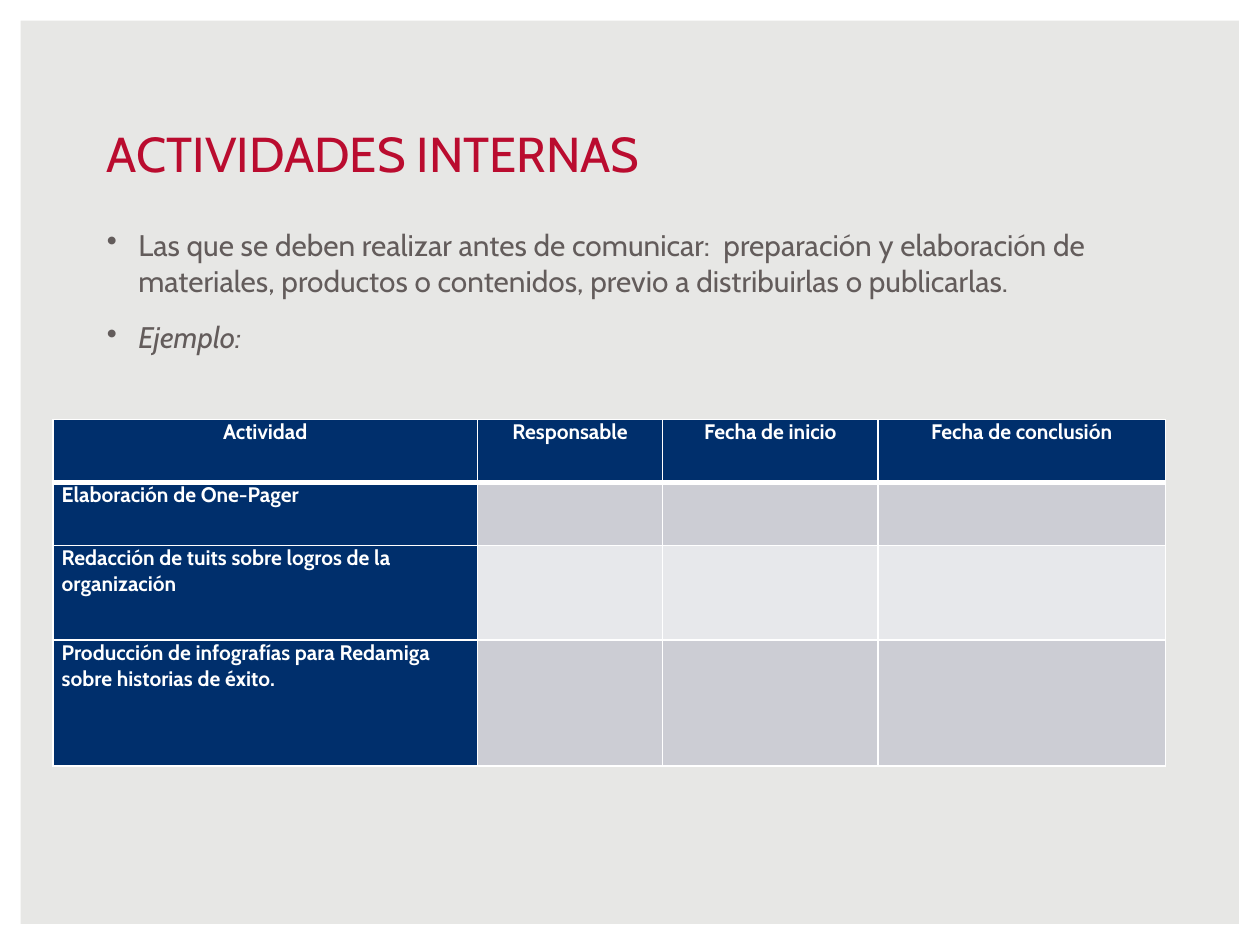
import pptx
import pptx.dml.color
import pptx.enum.shapes
import pptx.enum.text
import pptx.oxml
import pptx.oxml.ns
import pptx.util
from pptx.util import Inches

FONT = "Cabin"
WHITE, NAVY, RED, GRAY = "FFFFFF", "002F6C", "BA0C2F", "635C5B"
PAPER, BAND_DARK, BAND_LIGHT = "E7E7E5", "CCCDD4", "E7E8EB"

BULLETS = [
    ("Las que se deben realizar antes de comunicar:  preparación y elaboración de "
     "materiales, productos o contenidos, previo a distribuirlas o publicarlas.", False),
    ("Ejemplo:", True),
]
HEADINGS = ["Actividad", "Responsable", "Fecha de inicio", "Fecha de conclusión"]
ACTIVITIES = [
    "Elaboración de One-Pager",
    "Redacción de tuits sobre logros de la organización",
    "Producción de infografías para Redamiga sobre historias de éxito.",
]
COLUMN_WIDTHS = [3.37, 1.47, 1.71, 2.28]
ROW_HEIGHTS = [0.5, 0.5, 0.75, 1]


def paint(fill, color):
    """Apply a solid hex color to a fill."""
    fill.solid()
    fill.fore_color.rgb = pptx.dml.color.RGBColor.from_string(color)


def write(paragraph, text, size, color, **formats):
    """Add a formatted run to a paragraph."""
    run = paragraph.add_run()
    run.text = text
    settings = {"name": FONT, "size": pptx.util.Pt(size), **formats}
    for name, value in settings.items():
        setattr(run.font, name, value)
    paint(run.font.fill, color)


def add_text_frame(slide, left, top, width, height, anchor):
    """Add a wrapping text box and return its text frame."""
    frame = slide.shapes.add_textbox(
        Inches(left), Inches(top), Inches(width), Inches(height)).text_frame
    frame.word_wrap = True
    frame.vertical_anchor = anchor
    return frame


def set_bullet(paragraph):
    """Give a paragraph a hanging round bullet."""
    properties = paragraph._p.get_or_add_pPr()
    properties.set("marL", str(Inches(0.25)))
    properties.set("indent", str(Inches(-0.25)))
    properties.append(pptx.oxml.parse_xml(
        f'<a:buChar {pptx.oxml.ns.nsdecls("a")} char="•"/>'))


def add_border(cell, side, points):
    """Draw a white line on one side of a cell."""
    cell._tc.get_or_add_tcPr().append(pptx.oxml.parse_xml(
        f'<a:ln{side} {pptx.oxml.ns.nsdecls("a")} w="{pptx.util.Pt(points)}">'
        f'<a:solidFill><a:srgbClr val="{WHITE}"/></a:solidFill></a:ln{side}>'))


def add_border_frame(slide, width, height):
    """Draw the white frame around the slide."""
    border = slide.shapes.add_shape(
        pptx.enum.shapes.MSO_SHAPE.FRAME, 0, 0, width, height)
    border.adjustments[0] = 0.022
    border.shadow.inherit = False
    paint(border.fill, WHITE)
    border.line.fill.background()


def add_bullets(slide):
    """Add the explanatory bullet list."""
    body = add_text_frame(slide, 0.75, 1.75, 8.5, 1.17, pptx.enum.text.MSO_ANCHOR.TOP)
    for index, (text, italic) in enumerate(BULLETS):
        paragraph = body.add_paragraph() if index else body.paragraphs[0]
        paragraph.space_after = pptx.util.Pt(12)
        set_bullet(paragraph)
        write(paragraph, text, 17, GRAY, italic=italic)


def fill_cell(cell, row, column, text):
    """Format one table cell and write its label."""
    for side in "LRTB":
        under_heading = (row, side) in [(0, "B"), (1, "T")]
        add_border(cell, side, 3 if under_heading else 1)
    labelled = row == 0 or column == 0
    paint(cell.fill, NAVY if labelled else BAND_DARK if row % 2 else BAND_LIGHT)
    margins = {"margin_left": 0.07, "margin_right": 0.07,
               "margin_top": 0, "margin_bottom": 0}
    for name, value in margins.items():
        setattr(cell, name, Inches(value))
    if text:
        paragraph = cell.text_frame.paragraphs[0]
        if row == 0:
            paragraph.alignment = pptx.enum.text.PP_ALIGN.CENTER
        write(paragraph, text, 12, WHITE, bold=True)


def add_schedule(slide):
    """Add the activity schedule table."""
    rows = [HEADINGS] + [[activity, "", "", ""] for activity in ACTIVITIES]
    schedule = slide.shapes.add_table(
        len(rows), len(HEADINGS), Inches(0.42), Inches(3.33),
        Inches(sum(COLUMN_WIDTHS)), Inches(sum(ROW_HEIGHTS))).table
    for column, width in zip(schedule.columns, COLUMN_WIDTHS):
        column.width = Inches(width)
    for row, height in zip(schedule.rows, ROW_HEIGHTS):
        row.height = Inches(height)
    for row, texts in enumerate(rows):
        for column, text in enumerate(texts):
            fill_cell(schedule.cell(row, column), row, column, text)


def main():
    """Build and save the slide."""
    deck = pptx.Presentation()
    deck.slide_width, deck.slide_height = Inches(10), Inches(7.5)
    slide = deck.slides.add_slide(deck.slide_layouts[6])
    paint(slide.background.fill, PAPER)
    add_border_frame(slide, deck.slide_width, deck.slide_height)
    title = add_text_frame(slide, 0.75, 0.93, 8.5, 0.57,
                           pptx.enum.text.MSO_ANCHOR.BOTTOM)
    write(title.paragraphs[0], "ACTIVIDADES INTERNAS", 28, RED)
    add_bullets(slide)
    add_schedule(slide)
    deck.save("out.pptx")


if __name__ == "__main__":
    main()
